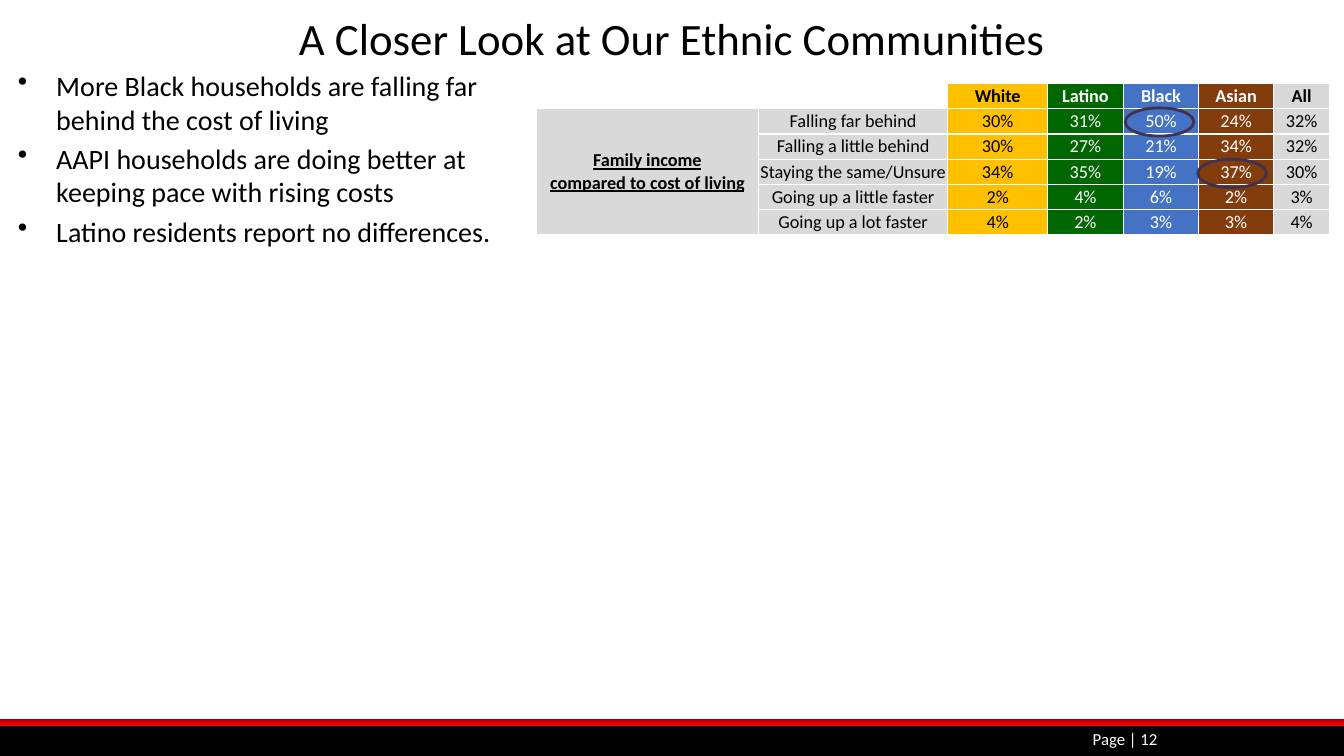
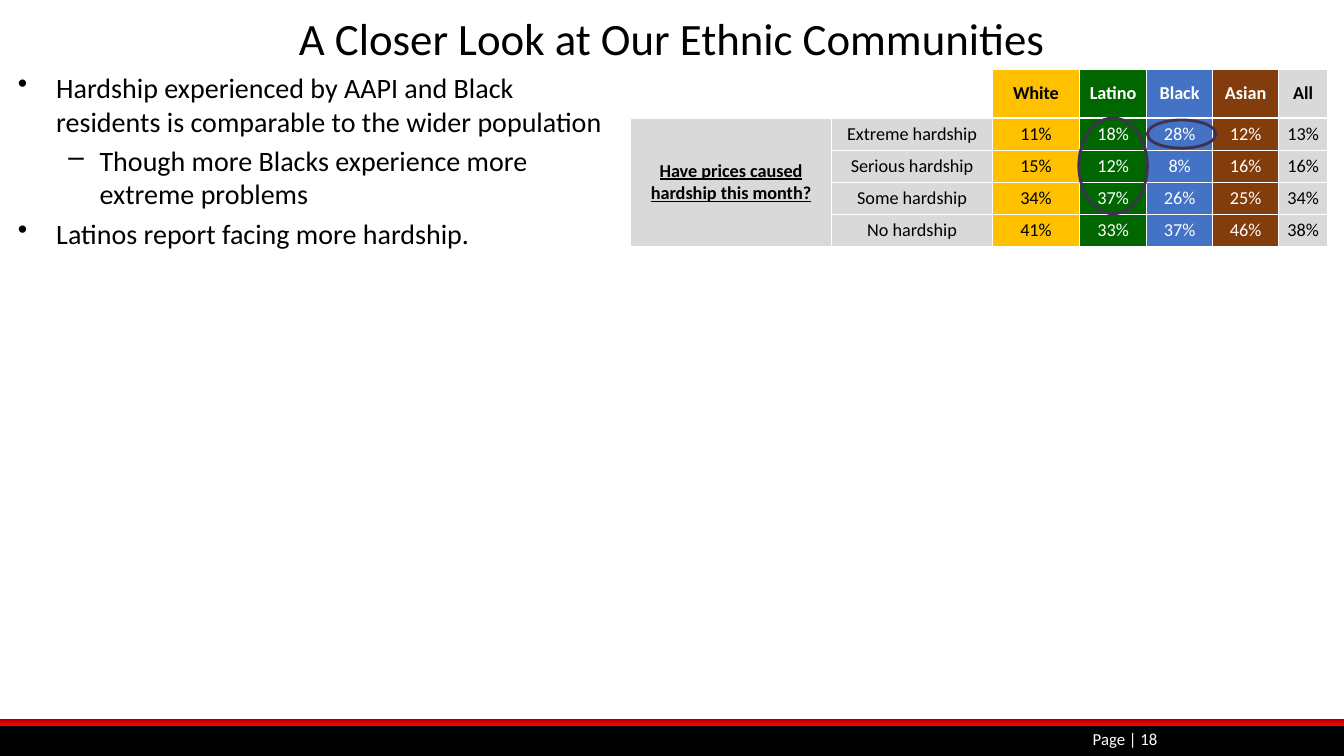
from lxml import etree
from pptx import Presentation
from pptx.dml.color import RGBColor
from pptx.enum.shapes import MSO_SHAPE
from pptx.enum.text import MSO_ANCHOR, MSO_AUTO_SIZE, PP_ALIGN
from pptx.oxml import parse_xml
from pptx.oxml.ns import nsdecls, qn
from pptx.util import Pt

PX = 9144
RECT, OVAL = MSO_SHAPE.RECTANGLE, MSO_SHAPE.OVAL
CENTER, LEFT, RIGHT = PP_ALIGN.CENTER, PP_ALIGN.LEFT, PP_ALIGN.RIGHT
TOP, MIDDLE = MSO_ANCHOR.TOP, MSO_ANCHOR.MIDDLE
NO_FIT = MSO_AUTO_SIZE.NONE

FONT = "Calibri"
BLACK, WHITE, GREY, RING = "000000", "FFFFFF", "D9D9D9", "403152"
TITLE = "A Closer Look at Our Ethnic Communities"
GROUPS = [
    ("White", "FFC000", BLACK),
    ("Latino", "006600", WHITE),
    ("Black", "4472C4", WHITE),
    ("Asian", "833C0C", WHITE),
    ("All", GREY, BLACK),
]
RED_STOPS = [(0, "970000"), (50, "D70000"), (100, "FF0000")]
BULLETS = [("•", 38, 38), ("–", 81, 31)]

SLIDES = [
    {
        "page": 12,
        "body_box": (8, 63, 524, 537),
        "bullets": [
            (0, "More Black households are falling far behind the cost of living"),
            (0, "AAPI households are doing better at keeping pace with rising costs"),
            (0, "Latino residents report no differences."),
        ],
        "table_at": (532, 83),
        "cols": [220, 188, 99, 75, 75, 74, 56],
        "header_height": 25,
        "row_height": 25,
        "margin": 0,
        "question": "Family income\vcompared to cost of living",
        "answers": [
            ("Falling far behind", [30, 31, 50, 24, 32]),
            ("Falling a little behind", [30, 27, 21, 34, 32]),
            ("Staying the same/Unsure", [34, 35, 19, 37, 30]),
            ("Going up a little faster", [2, 4, 6, 2, 3]),
            ("Going up a lot faster", [4, 2, 3, 3, 4]),
        ],
        "rings": [(1116, 107, 68, 28), (1188, 158, 68, 28)],
    },
    {
        "page": 18,
        "body_box": (8, 65, 600, 154),
        "bullets": [
            (0, "Hardship experienced by AAPI and Black residents is comparable "
                "to the wider population"),
            (1, "Though more Blacks experience more extreme problems"),
            (0, "Latinos report facing more hardship."),
        ],
        "table_at": (625, 69),
        "cols": [200, 159, 87, 66, 66, 65, 49],
        "header_height": 48,
        "row_height": 32,
        "margin": 1,
        "question": "Have prices caused hardship this month?",
        "answers": [
            ("Extreme hardship", [11, 18, 28, 12, 13]),
            ("Serious hardship", [15, 12, 8, 16, 16]),
            ("Some hardship", [34, 37, 26, 25, 34]),
            ("No hardship", [41, 33, 37, 46, 38]),
        ],
        "rings": [(1070, 117, 68, 95), (1138, 119, 68, 28)],
    },
]


def px(*values):
    return [v * PX for v in values]


def rgb(color):
    return RGBColor.from_string(color)


def set_attrs(obj, values):
    for name, value in values.items():
        setattr(obj, name, value)


def write(p, text, size, color, align=LEFT, **font):
    p.text = text
    p.alignment = align
    for r in p.runs:
        set_attrs(r.font, {"name": FONT, "size": Pt(size), **font})
        r.font.color.rgb = rgb(color)


def set_frame(tf, anchor):
    set_attrs(tf, {"word_wrap": True, "auto_size": NO_FIT, "vertical_anchor": anchor})


def add_text_box(s, box, anchor=TOP):
    tf = s.shapes.add_textbox(*px(*box)).text_frame
    set_frame(tf, anchor)
    return tf


def add_plain_shape(s, kind, box, fill=None, line=None):
    sp = s.shapes.add_shape(kind, *px(*box))
    sp.shadow.inherit = False
    if fill:
        sp.fill.solid()
        sp.fill.fore_color.rgb = rgb(fill)
    else:
        sp.fill.background()
    if line:
        sp.line.color.rgb = rgb(line)
        sp.line.width = Pt(2)
    else:
        sp.line.fill.background()
    return sp


def set_gradient(sp, stops):
    stop_xml = "".join(
        f'<a:gs pos="{pos * 1000}"><a:srgbClr val="{color}"/></a:gs>'
        for pos, color in stops)
    gradient = parse_xml(
        f'<a:gradFill {nsdecls("a")} rotWithShape="1"><a:gsLst>{stop_xml}</a:gsLst>'
        '<a:lin ang="5400000" scaled="0"/></a:gradFill>')
    spPr = sp.element.spPr
    spPr.replace(spPr.find(qn("a:noFill")), gradient)


def move_bands_to_layout(s, layout):
    black_band = add_plain_shape(s, RECT, (0, 719, 1333, 31), BLACK)
    red_band = add_plain_shape(s, RECT, (-2, 713, 1335, 7))
    set_gradient(red_band, RED_STOPS)
    for band in (black_band, red_band):
        layout.shapes.element.append(band.element)


def set_title(s):
    title = s.shapes.title
    left, top, width, height = px(8, 5, 1317, 64)
    set_attrs(title, {"left": left, "top": top, "width": width, "height": height})
    set_frame(title.text_frame, MIDDLE)
    write(title.text_frame.paragraphs[0], TITLE, 32, BLACK, CENTER)


def add_bullets(s, box, items):
    tf = add_text_box(s, box)
    for i, (level, text) in enumerate(items):
        p = tf.add_paragraph() if i else tf.paragraphs[0]
        write(p, text, 20, BLACK)
        p.level = level
        p.space_before = Pt(4)
        mark, margin, hanging = BULLETS[level]
        pPr = p._p.get_or_add_pPr()
        pPr.set("marL", str(margin * PX))
        pPr.set("indent", str(-hanging * PX))
        etree.SubElement(pPr, qn("a:buChar")).set("char", mark)


def add_page_number(s, number):
    tf = add_text_box(s, (925, 720, 233, 25), MIDDLE)
    write(tf.paragraphs[0], f"Page | {number}", 12, WHITE, RIGHT)


def set_borders(cell):
    tcPr = cell._tc.get_or_add_tcPr()
    for i, side in enumerate("LRTB"):
        tcPr.insert(i, parse_xml(
            f'<a:ln{side} {nsdecls("a")} w="12700"><a:solidFill>'
            f'<a:srgbClr val="{WHITE}"/></a:solidFill></a:ln{side}>'))


def fill_cell(cell, text, fill, color, margin, **font):
    sides = ("margin_left", "margin_right", "margin_top", "margin_bottom")
    set_attrs(cell, dict.fromkeys(sides, margin * PX))
    cell.vertical_anchor = MIDDLE
    if fill:
        cell.fill.solid()
        cell.fill.fore_color.rgb = rgb(fill)
    else:
        cell.fill.background()
    set_borders(cell)
    p = cell.text_frame.paragraphs[0]
    write(p, text, 13, color, CENTER, **font)
    if not text:
        etree.SubElement(p._p, qn("a:endParaRPr")).set("sz", "1300")


def add_group_table(s, spec_):
    answers, cols, margin = spec_["answers"], spec_["cols"], spec_["margin"]
    heights = [spec_["header_height"]] + [spec_["row_height"]] * len(answers)
    box = (*spec_["table_at"], sum(cols), sum(heights))
    table = s.shapes.add_table(len(heights), len(cols), *px(*box)).table
    set_attrs(table, {"first_row": False, "horz_banding": False})
    for column, width in zip(table.columns, px(*cols)):
        column.width = width
    for row, height in zip(table.rows, px(*heights)):
        row.height = height

    for c in (0, 1):
        fill_cell(table.cell(0, c), "", None, BLACK, margin)
    for c, (name, fill, color) in enumerate(GROUPS, 2):
        fill_cell(table.cell(0, c), name, fill, color, margin, bold=True)
    for r, (answer, shares) in enumerate(answers, 1):
        question = spec_["question"] if r == 1 else ""
        fill_cell(table.cell(r, 0), question, GREY, BLACK, margin,
                  bold=True, underline=True)
        fill_cell(table.cell(r, 1), answer, GREY, BLACK, margin)
        for c, (share, (_, fill, color)) in enumerate(zip(shares, GROUPS), 2):
            fill_cell(table.cell(r, c), f"{share}%", fill, color, margin)
    table.cell(0, 0).merge(table.cell(0, 1))
    table.cell(1, 0).merge(table.cell(len(answers), 0))


def main():
    prs = Presentation()
    prs.slide_width, prs.slide_height = px(1333, 750)
    layout = prs.slide_layouts[5]
    for i, content in enumerate(SLIDES):
        s = prs.slides.add_slide(layout)
        if i == 0:
            move_bands_to_layout(s, layout)
        set_title(s)
        add_bullets(s, content["body_box"], content["bullets"])
        add_page_number(s, content["page"])
        add_group_table(s, content)
        for ring in content["rings"]:
            add_plain_shape(s, OVAL, ring, line=RING)
    prs.save("out.pptx")


if __name__ == "__main__":
    main()
